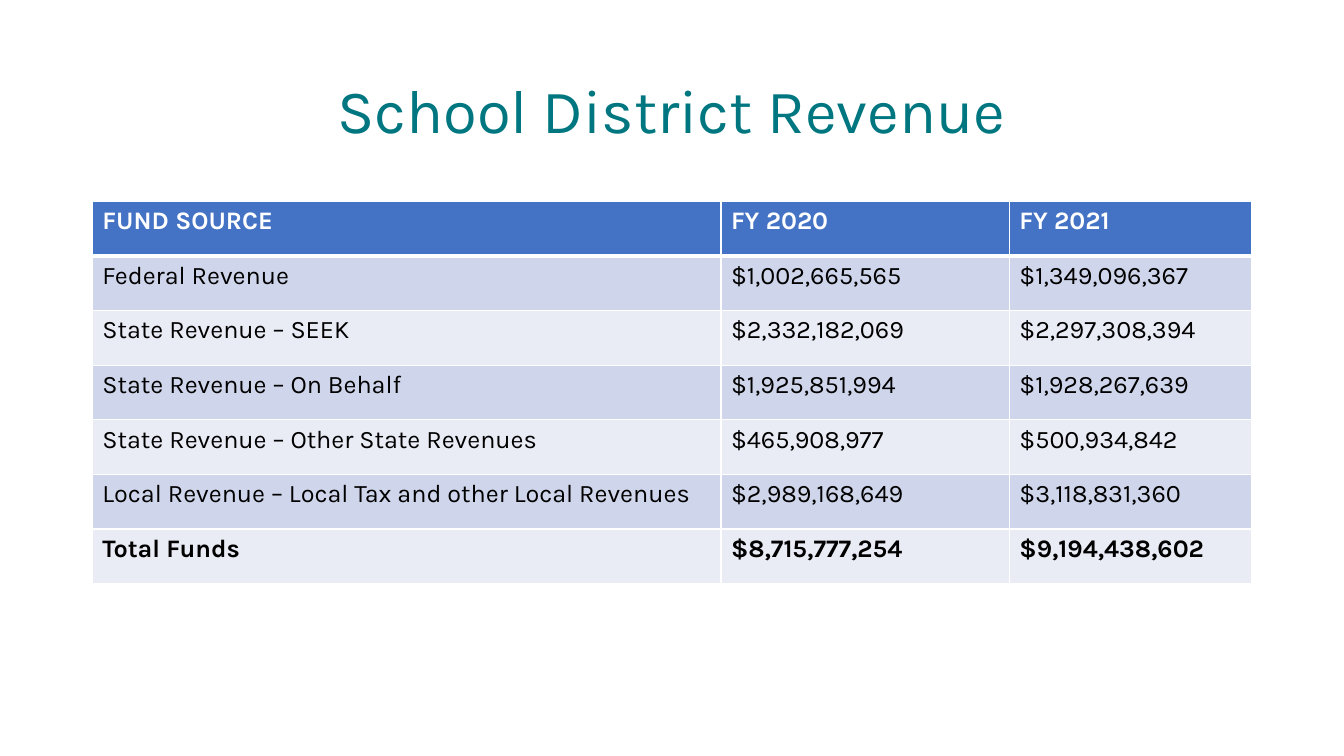
"""Build the School District Revenue slide with its fund table."""

from dataclasses import dataclass

from lxml import etree
from pptx import Presentation
from pptx.dml.color import RGBColor
from pptx.enum.text import MSO_ANCHOR, PP_ALIGN
from pptx.oxml.ns import qn
from pptx.slide import Slide
from pptx.table import _Cell
from pptx.text.text import _Paragraph
from pptx.util import Pt

CENTER = PP_ALIGN.CENTER
MIDDLE = MSO_ANCHOR.MIDDLE

FONT = "Karla"
TEAL = RGBColor(0x00, 0x77, 0x80)
WHITE = RGBColor(0xFF, 0xFF, 0xFF)
BLACK = RGBColor(0x00, 0x00, 0x00)
HEADER_BLUE = RGBColor(0x44, 0x72, 0xC4)
BANDS = (RGBColor(0xCF, 0xD5, 0xEA), RGBColor(0xE9, 0xEB, 0xF5))

TITLE_ONLY = 5
LEFT, WIDTH = 66, 828
TITLE_TOP, TITLE_HEIGHT = 28.75, 104.4
TABLE_TOP, ROW_HEIGHT = 144, 39
COLUMN_WIDTHS = (449, 206, 173)
THIN, THICK = 1, 3


@dataclass(frozen=True)
class RevenueRow:
    source: str
    fy_2020: str
    fy_2021: str
    fill: RGBColor
    color: RGBColor = BLACK
    bold: bool = False
    bottom: float = THIN


HEADER = RevenueRow("FUND SOURCE", "FY 2020", "FY 2021", HEADER_BLUE, WHITE, True, THICK)
ROWS = (
    HEADER,
    RevenueRow("Federal Revenue", "$1,002,665,565", "$1,349,096,367", BANDS[0]),
    RevenueRow("State Revenue – SEEK", "$2,332,182,069", "$2,297,308,394", BANDS[1]),
    RevenueRow("State Revenue – On Behalf", "$1,925,851,994", "$1,928,267,639", BANDS[0]),
    RevenueRow("State Revenue – Other State Revenues", "$465,908,977", "$500,934,842", BANDS[1]),
    RevenueRow("Local Revenue – Local Tax and other Local Revenues",
               "$2,989,168,649", "$3,118,831,360", BANDS[0]),
    RevenueRow("Total Funds", "$8,715,777,254", "$9,194,438,602", BANDS[1], bold=True),
)


def add_run(paragraph: _Paragraph, text: str, size: float, color: RGBColor, bold: bool = False) -> None:
    run = paragraph.add_run()
    run.text = text
    run.font.name = FONT
    run.font.size = Pt(size)
    run.font.bold = bold
    run.font.color.rgb = color


def set_borders(cell: _Cell, top: float, bottom: float) -> None:
    properties = cell._tc.get_or_add_tcPr()
    for tag, width in (("a:lnL", THIN), ("a:lnR", THIN), ("a:lnT", top), ("a:lnB", bottom)):
        line = etree.SubElement(properties, qn(tag), w=str(Pt(width)))
        fill = etree.SubElement(line, qn("a:solidFill"))
        etree.SubElement(fill, qn("a:srgbClr"), val=str(WHITE))


def add_title(slide: Slide, text: str) -> None:
    title = slide.shapes.title
    title.left, title.top = Pt(LEFT), Pt(TITLE_TOP)
    title.width, title.height = Pt(WIDTH), Pt(TITLE_HEIGHT)
    title.text_frame.vertical_anchor = MIDDLE
    title.text_frame.word_wrap = True
    paragraph = title.text_frame.paragraphs[0]
    paragraph.alignment = CENTER
    paragraph.line_spacing = 0.9
    add_run(paragraph, text, 44, TEAL)


def add_revenue_table(slide: Slide, rows: tuple[RevenueRow, ...]) -> None:
    table = slide.shapes.add_table(
        len(rows), len(COLUMN_WIDTHS), Pt(LEFT), Pt(TABLE_TOP), Pt(WIDTH), Pt(ROW_HEIGHT * len(rows))
    ).table
    for column, width in zip(table.columns, COLUMN_WIDTHS):
        column.width = Pt(width)
    top = THIN
    for table_row, row in zip(table.rows, rows):
        table_row.height = Pt(ROW_HEIGHT)
        for cell, text in zip(table_row.cells, (row.source, row.fy_2020, row.fy_2021)):
            set_borders(cell, top, row.bottom)
            cell.fill.solid()
            cell.fill.fore_color.rgb = row.fill
            add_run(cell.text_frame.paragraphs[0], text, 18, row.color, row.bold)
        top = row.bottom


def main() -> None:
    presentation = Presentation()
    presentation.slide_width, presentation.slide_height = Pt(960), Pt(540)
    slide = presentation.slides.add_slide(presentation.slide_layouts[TITLE_ONLY])
    add_title(slide, "School District Revenue")
    add_revenue_table(slide, ROWS)
    presentation.save("out.pptx")


if __name__ == "__main__":
    main()
